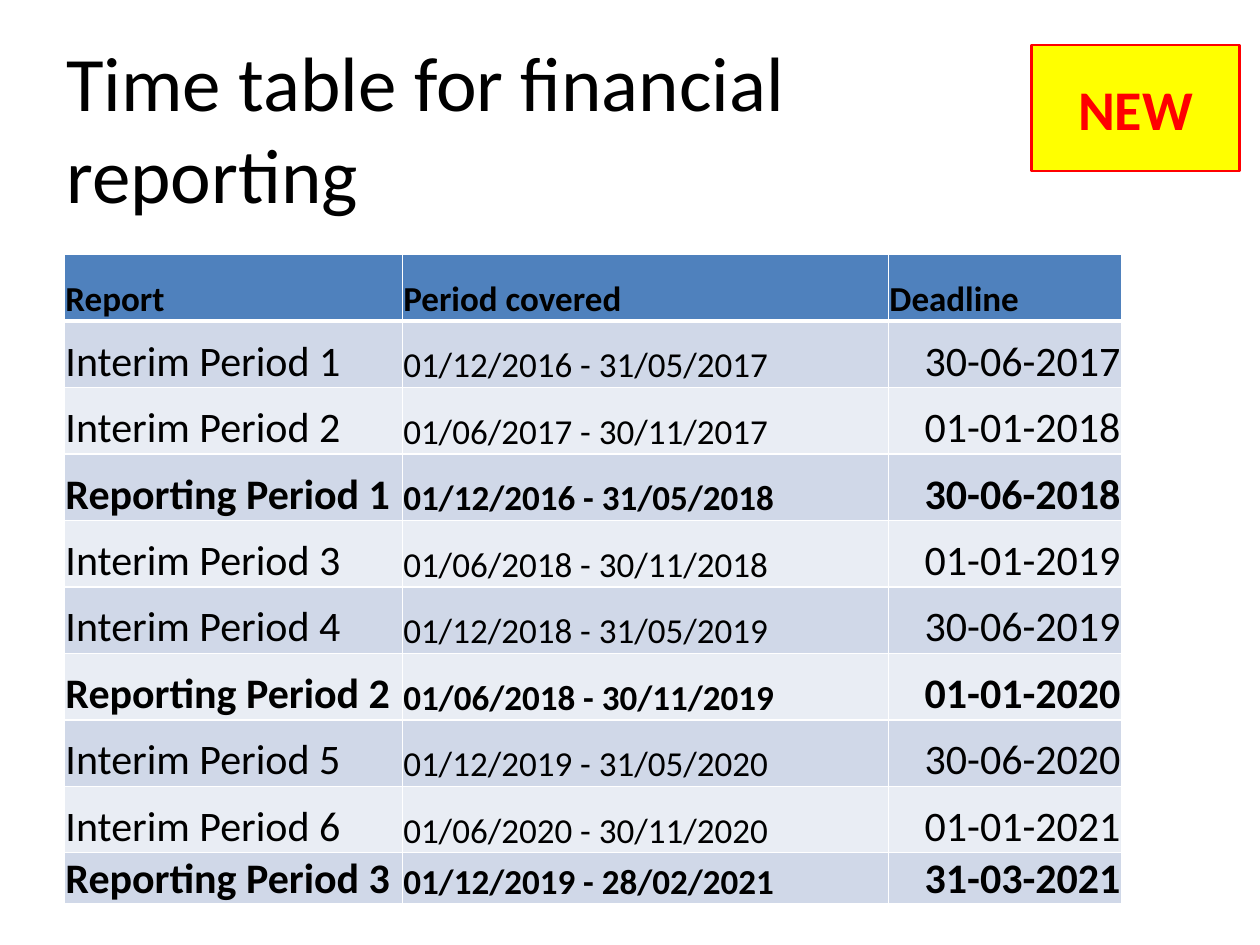
from lxml import etree
from pptx import Presentation
from pptx import util as u
from pptx.dml import color
from pptx.enum import shapes, text
from pptx.oxml import ns

COLORS = {
    "text": "000000",
    "header": "4F81BD",
    "odd_row": "D0D8E8",
    "even_row": "E9EDF4",
    "border": "FFFFFF",
    "badge": "FFFF00",
    "alert": "FF0000",
}

HEADINGS = ("Report", "Period covered", "Deadline")
REPORTS = [
    ("Interim Period 1", "01/12/2016 - 31/05/2017", "30-06-2017"),
    ("Interim Period 2", "01/06/2017 - 30/11/2017", "01-01-2018"),
    ("Reporting Period 1", "01/12/2016 - 31/05/2018", "30-06-2018"),
    ("Interim Period 3", "01/06/2018 - 30/11/2018", "01-01-2019"),
    ("Interim Period 4", "01/12/2018 - 31/05/2019", "30-06-2019"),
    ("Reporting Period 2", "01/06/2018 - 30/11/2019", "01-01-2020"),
    ("Interim Period 5", "01/12/2019 - 31/05/2020", "30-06-2020"),
    ("Interim Period 6", "01/06/2020 - 30/11/2020", "01-01-2021"),
    ("Reporting Period 3", "01/12/2019 - 28/02/2021", "31-03-2021"),
]
COLUMN_WIDTHS = (6.81, 9.8, 4.7)
ROW_HEIGHTS = [1.34] * len(REPORTS) + [0.94]


def rgb(name):
    return color.RGBColor.from_string(COLORS[name])


class SlideBuilder:
    font_name = "Calibri"

    def __init__(self, slide):
        self.slide = slide

    def set_text(self, frame, content, size, color_name="text", bold=False,
                 align=text.PP_ALIGN.LEFT):
        frame.text = content
        frame.word_wrap = True
        for paragraph in frame.paragraphs:
            paragraph.alignment = align
            for run in paragraph.runs:
                run.font.name = self.font_name
                run.font.size = u.Pt(size)
                run.font.bold = bold
                run.font.color.rgb = rgb(color_name)

    def title(self, content, left, top, width, height):
        box = self.slide.shapes.add_textbox(*map(u.Cm, (left, top, width, height)))
        self.set_text(box.text_frame, content, 44)
        box.text_frame.vertical_anchor = text.MSO_ANCHOR.MIDDLE

    def badge(self, content, left, top, width, height):
        shape = self.slide.shapes.add_shape(
            shapes.MSO_SHAPE.RECTANGLE, *map(u.Cm, (left, top, width, height)))
        shape.shadow.inherit = False
        shape.fill.solid()
        shape.fill.fore_color.rgb = rgb("badge")
        shape.line.color.rgb = rgb("alert")
        shape.line.width = u.Pt(1.5)
        self.set_text(shape.text_frame, content, 32, "alert", True, text.PP_ALIGN.CENTER)
        shape.text_frame.vertical_anchor = text.MSO_ANCHOR.MIDDLE

    def borders(self, cell, top, bottom):
        properties = cell._tc.get_or_add_tcPr()
        for side, points in (("L", 1), ("R", 1), ("T", top), ("B", bottom)):
            line = etree.SubElement(properties, ns.qn(f"a:ln{side}"), w=str(u.Pt(points)))
            fill = etree.SubElement(line, ns.qn("a:solidFill"))
            etree.SubElement(fill, ns.qn("a:srgbClr"), val=COLORS["border"])

    def cell(self, cell, content, row, column):
        is_header = row == 0
        is_deadline = column == 2 and not is_header
        size = 20 if is_header or column == 1 else 24
        bold = is_header or REPORTS[row - 1][0].startswith("Reporting")
        align = text.PP_ALIGN.RIGHT if is_deadline else text.PP_ALIGN.LEFT
        self.set_text(cell.text_frame, content, size, bold=bold, align=align)
        cell.vertical_anchor = text.MSO_ANCHOR.BOTTOM
        cell.margin_left = cell.margin_right = cell.margin_top = u.Cm(0.02)
        cell.margin_bottom = 0
        self.borders(cell, 3 if row == 1 else 1, 3 if is_header else 1)
        cell.fill.solid()
        band = "odd_row" if row % 2 else "even_row"
        cell.fill.fore_color.rgb = rgb("header" if is_header else band)

    def table(self, rows, left, top):
        frame = self.slide.shapes.add_table(
            len(rows), len(COLUMN_WIDTHS), u.Cm(left), u.Cm(top),
            u.Cm(sum(COLUMN_WIDTHS)), u.Cm(sum(ROW_HEIGHTS)))
        table = frame.table
        for column, width in zip(table.columns, COLUMN_WIDTHS):
            column.width = u.Cm(width)
        for row, height in zip(table.rows, ROW_HEIGHTS):
            row.height = u.Cm(height)
        for row, values in enumerate(rows):
            for column, value in enumerate(values):
                self.cell(table.cell(row, column), value, row, column)


def main():
    presentation = Presentation()
    presentation.slide_width = u.Cm(25.4)
    presentation.slide_height = u.Cm(19.05)
    builder = SlideBuilder(presentation.slides.add_slide(presentation.slide_layouts[6]))

    # Title, with a line break inside one paragraph
    builder.title("Time table for financial \vreporting", 1.09, 0.97, 21.41, 3.18)

    # Reporting schedule
    builder.table([HEADINGS] + REPORTS, 1.3, 5.13)

    # Corner badge
    builder.badge("NEW", 20.8, 0.91, 4.19, 2.54)

    presentation.save("out.pptx")


if __name__ == "__main__":
    main()
